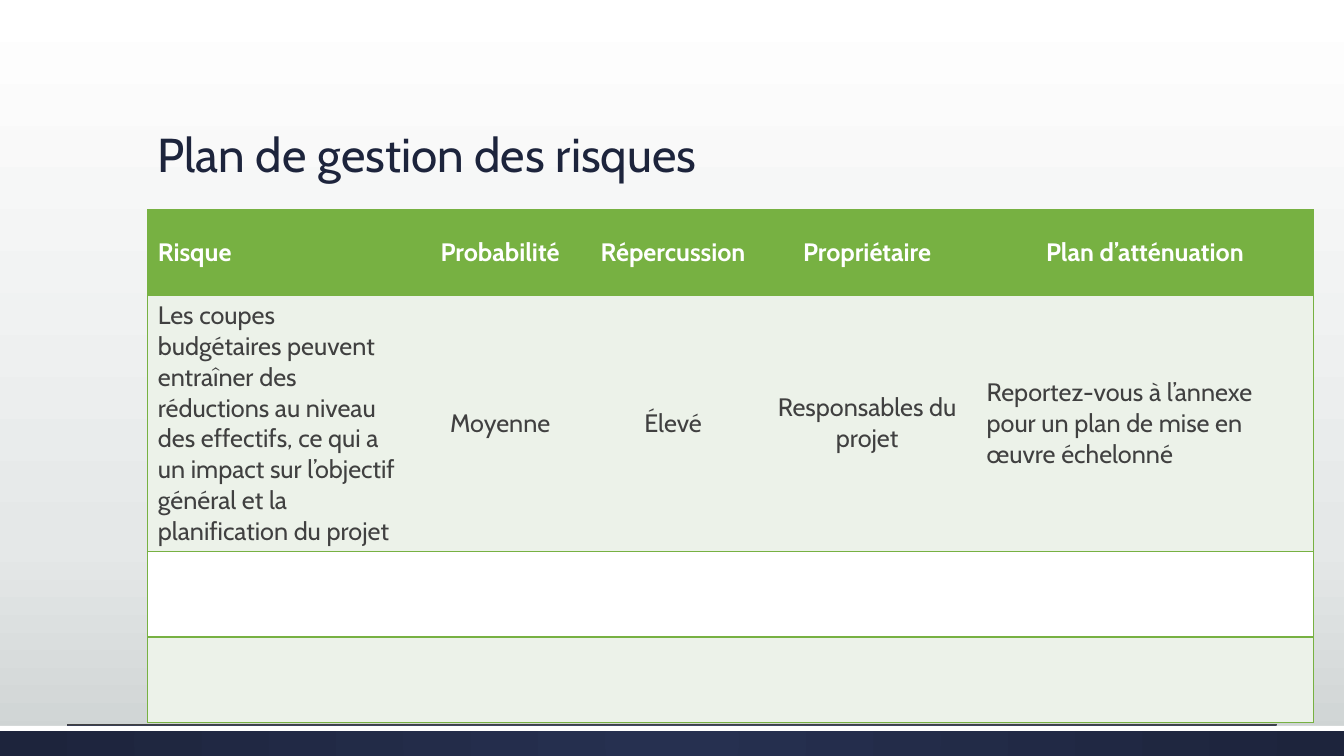
from dataclasses import dataclass

from lxml import etree
from pptx import Presentation
from pptx import util as u
from pptx.dml.color import RGBColor
from pptx.enum import shapes, text
from pptx.oxml.ns import qn


@dataclass(frozen=True)
class Theme:
    """Colours, font and type sizes of the slide."""
    font: str = "Cabin"
    title_size: int = 34
    table_size: int = 18
    navy: str = "1D243C"
    green: str = "77B142"
    band: str = "ECF2E9"
    white: str = "FFFFFF"
    body: str = "404040"
    backdrop: tuple = ((0, "FFFFFF"), (72, "E5E8E8"), (100, "CDD2D2"))
    footer: tuple = ((0, "263050"), (100, "1D243C"))


THEME = Theme()
WIDTH, HEIGHT = 13.33, 7.5
NO_GRID_STYLE = "{2D5ABB26-0587-4C30-8999-92F81FD0307C}"
COLUMNS = (2.62, 1.75, 1.68, 2.17, 3.34)
ROWS = (0.85, 2.54, 0.85, 0.85)
RISKS = (
    ("Risque", "Probabilité", "Répercussion", "Propriétaire", "Plan d’atténuation"),
    ("Les coupes budgétaires peuvent entraîner des réductions au niveau des effectifs, "
     "ce qui a un impact sur l’objectif général et la planification du projet",
     "Moyenne", "Élevé", "Responsables du projet",
     "Reportez-vous à l’annexe pour un plan de mise en œuvre échelonné"),
    ("",) * 5,
    ("",) * 5,
)


def colour(code):
    """Return the colour for a hex code."""
    return RGBColor.from_string(code)


def inches(*lengths):
    """Convert lengths in inches."""
    return [u.Inches(length) for length in lengths]


def set_gradient(fill, owner, stops, radial=False):
    """Give a fill gradient stops, running downwards or out from the centre."""
    fill.gradient()
    gradient = next(owner.iter(qn("a:gradFill")))
    stop_list = gradient.find(qn("a:gsLst"))
    for stop in list(stop_list):
        stop_list.remove(stop)
    for position, code in stops:
        stop = etree.SubElement(stop_list, qn("a:gs"), pos=str(position * 1000))
        etree.SubElement(stop, qn("a:srgbClr"), val=code)
    if not radial:
        fill.gradient_angle = 270
        return
    gradient.remove(gradient.find(qn("a:lin")))
    circle = etree.SubElement(gradient, qn("a:path"), path="circle")
    etree.SubElement(circle, qn("a:fillToRect"), dict.fromkeys("ltrb", "50000"))


def set_font(paragraph, size, code, bold=False):
    """Set the type of a paragraph."""
    font = paragraph.font
    font.name, font.size, font.bold = THEME.font, u.Pt(size), bold
    font.color.rgb = colour(code)


def add_bar(slide, box):
    """Add a plain rectangle without outline."""
    bar = slide.shapes.add_shape(shapes.MSO_SHAPE.RECTANGLE, *inches(*box))
    bar.shadow.inherit = False
    bar.line.fill.background()
    return bar


def add_footer(slide, left, top, width, height):
    """Add the navy footer with its white edge and the thin rule above it."""
    band = add_bar(slide, (left, top, width, height))
    set_gradient(band.fill, band.element, THEME.footer, radial=True)
    edge = add_bar(slide, (left, top, width, height / 6))
    edge.fill.solid()
    edge.fill.fore_color.rgb = colour(THEME.white)
    inset = width * 0.05
    rule = slide.shapes.add_connector(
        shapes.MSO_CONNECTOR.STRAIGHT,
        *inches(left + inset, top - 0.01, left + width - inset, top - 0.01))
    rule.line.color.rgb = colour(THEME.body)
    rule.line.width = u.Pt(0.75)
    etree.SubElement(rule.element.spPr, qn("a:effectLst"))


def add_title(slide, wording, box):
    """Add the title, resting on the bottom of its box."""
    frame = slide.shapes.add_textbox(*inches(*box)).text_frame
    frame.word_wrap = True
    frame.vertical_anchor = text.MSO_ANCHOR.BOTTOM
    paragraph = frame.paragraphs[0]
    paragraph.text = wording
    paragraph.line_spacing = 0.9
    set_font(paragraph, THEME.title_size, THEME.navy)


def set_borders(cell, sides):
    """Draw green lines on the given sides of a cell."""
    properties = cell._tc.get_or_add_tcPr()
    for index, side in enumerate(sides):
        line = etree.Element(qn(f"a:ln{side}"), w=str(u.Pt(1)))
        fill = etree.SubElement(line, qn("a:solidFill"))
        etree.SubElement(fill, qn("a:srgbClr"), val=THEME.green)
        properties.insert(index, line)


def add_risk_table(slide, left, top):
    """Add the risk table with a green header and banded rows."""
    frame = slide.shapes.add_table(
        len(ROWS), len(COLUMNS), *inches(left, top, sum(COLUMNS), sum(ROWS)))
    table = frame.table
    next(frame.element.iter(qn("a:tableStyleId"))).text = NO_GRID_STYLE
    for column, width in zip(table.columns, COLUMNS):
        column.width = u.Inches(width)
    last = len(COLUMNS) - 1
    for row, (height, wordings) in enumerate(zip(ROWS, RISKS)):
        table.rows[row].height = u.Inches(height)
        header = row == 0
        background = THEME.green if header else (THEME.white, THEME.band)[row % 2]
        for column, wording in enumerate(wordings):
            cell = table.cell(row, column)
            cell.fill.solid()
            cell.fill.fore_color.rgb = colour(background)
            cell.vertical_anchor = text.MSO_ANCHOR.MIDDLE
            set_borders(cell, "L" * (column == 0) + "R" * (column == last) + "TB")
            paragraph = cell.text_frame.paragraphs[0]
            paragraph.text = wording
            centred = 0 < column < last or (header and column == last)
            paragraph.alignment = text.PP_ALIGN.CENTER if centred else text.PP_ALIGN.LEFT
            set_font(paragraph, THEME.table_size,
                     THEME.white if header else THEME.body, header)


def build_risk_slide(presentation):
    """Add the risk management slide."""
    slide = presentation.slides.add_slide(presentation.slide_layouts[6])
    set_gradient(slide.background.fill, slide.element, THEME.backdrop)
    margin = WIDTH * 0.11
    footer_height = HEIGHT * 0.04
    add_footer(slide, 0, HEIGHT - footer_height, WIDTH, footer_height)
    add_title(slide, "Plan de gestion des risques", (margin, 0.51, WIDTH * 0.78, 1.35))
    add_risk_table(slide, margin, 2.08)


def main():
    """Build and save the presentation."""
    presentation = Presentation()
    presentation.slide_width, presentation.slide_height = inches(WIDTH, HEIGHT)
    build_risk_slide(presentation)
    presentation.save("out.pptx")


if __name__ == "__main__":
    main()
